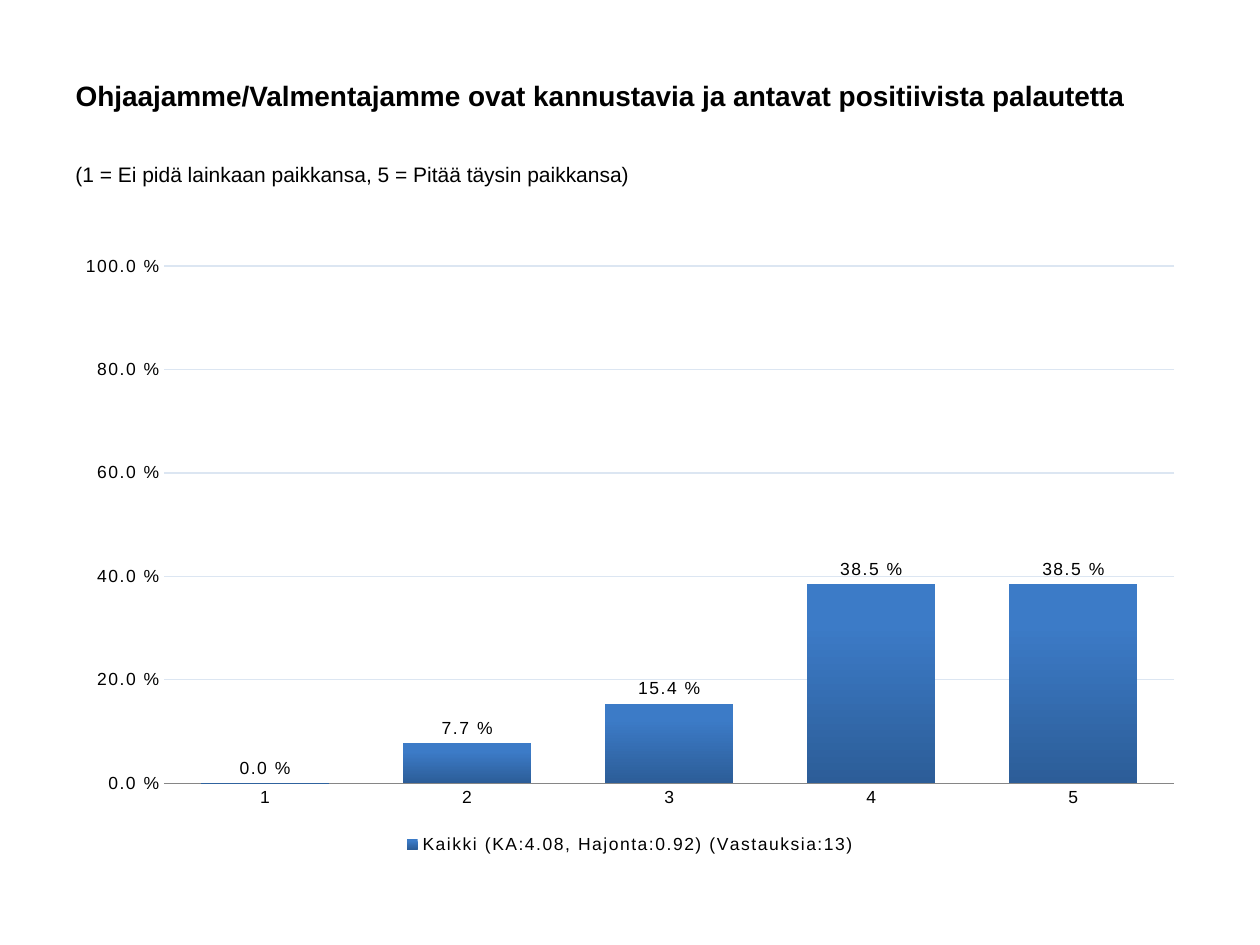
from lxml.etree import fromstring
from pptx import Presentation
from pptx.chart.data import CategoryChartData as ChartData
from pptx.dml.color import RGBColor
from pptx.enum.chart import (XL_CHART_TYPE as Kind, XL_LABEL_POSITION as Label,
                             XL_LEGEND_POSITION as Legend, XL_TICK_MARK as Tick)
from pptx.enum.text import MSO_ANCHOR as Anchor, PP_ALIGN as Align
from pptx.oxml.ns import qn
from pptx.util import Pt

TITLE = "Ohjaajamme/Valmentajamme ovat kannustavia ja antavat positiivista palautetta"
SCALE = "(1 = Ei pidä lainkaan paikkansa, 5 = Pitää täysin paikkansa)"
SERIES = "Kaikki (KA:4.08, Hajonta:0.92) (Vastauksia:13)"
SHARES = {"1": 0, "2": 0.077, "3": 0.154, "4": 0.385, "5": 0.385}
PERCENT = r"0.0\ %"

BOXES = {"title": (63, 45, 1134, 100),
         "scale": (63, 155, 1134, 74),
         "chart": (63, 244, 1134, 615)}
PLOT = (164, 266, 1010, 517)
EMU = 914400 // 126


def px(*sizes):
    return [n * 914400 // 126 for n in sizes]


def color(code):
    return RGBColor.from_string(code)


def style(font, size, bold=False):
    for key, val in {"name": "Arial", "size": Pt(size), "bold": bold}.items():
        setattr(font, key, val)
    font.color.rgb = color("000000")


def write(shape, text, size, bold, anchor):
    frame = shape.text_frame
    frame.text = text
    frame.word_wrap = True
    frame.vertical_anchor = anchor
    para = frame.paragraphs[0]
    para.alignment = Align.LEFT
    style(para.runs[0].font, size, bold)
    return para


def place_plot(chart):
    """Fix the inner plot area, given as fractions of the chart."""
    left, top, wide, high = BOXES["chart"]
    x, y, w, h = PLOT
    parts = {"x": (x - left) / wide, "y": (y - top) / high,
             "w": w / wide, "h": h / high}
    modes = '<c:layoutTarget val="inner"/><c:xMode val="edge"/><c:yMode val="edge"/>'
    sizes = "".join(f'<c:{key} val="{val:.3f}"/>' for key, val in parts.items())
    layout = fromstring(
        '<c:layout xmlns:c="http://schemas.openxmlformats.org/drawingml/2006/chart">'
        f"<c:manualLayout>{modes}{sizes}</c:manualLayout></c:layout>")
    area = chart._chartSpace.chart.plotArea
    for old in area.findall(qn("c:layout")):
        area.remove(old)
    area.insert(0, layout)


def add_bars(slide):
    data = ChartData(number_format=PERCENT)
    data.categories = list(SHARES)
    data.add_series(SERIES, list(SHARES.values()))
    chart = slide.shapes.add_chart(
        Kind.COLUMN_CLUSTERED, *px(*BOXES["chart"]), data).chart
    chart.has_title = False
    chart.has_legend = True
    chart.legend.position = Legend.BOTTOM
    chart.legend.include_in_layout = False
    style(chart.legend.font, 10)

    cats, vals = chart.category_axis, chart.value_axis
    for axis in (cats, vals):
        axis.major_tick_mark = axis.minor_tick_mark = Tick.NONE
        style(axis.tick_labels.font, 10)
    cats.format.line.color.rgb = color("868686")
    vals.format.line.fill.background()
    limits = {"minimum_scale": 0, "maximum_scale": 1, "major_unit": 0.2}
    for key, val in limits.items():
        setattr(vals, key, val)
    vals.tick_labels.number_format = PERCENT
    vals.tick_labels.number_format_is_linked = False
    grid = vals.major_gridlines.format.line
    grid.color.rgb = color("DCE6F2")
    grid.width = Pt(0.75)

    plot = chart.plots[0]
    plot.gap_width = 58
    plot.vary_by_categories = False
    plot.has_data_labels = True
    labels = plot.data_labels
    labels.show_value = True
    labels.number_format = PERCENT
    labels.number_format_is_linked = False
    labels.position = Label.OUTSIDE_END
    style(labels.font, 10)

    fill = plot.series[0].format.fill
    fill.gradient()
    fill.gradient_angle = 270
    stops = ((0.2, "3C7BC7"), (1, "2C5D98"))
    for stop, (spot, code) in zip(fill.gradient_stops, stops):
        stop.position = spot
        stop.color.rgb = color(code)

    for props in chart._chartSpace.iter(qn("a:defRPr")):
        props.set("spc", "100")
    place_plot(chart)


def main():
    deck = Presentation()
    deck.slide_width, deck.slide_height = px(1260, 945)
    slide = deck.slides.add_slide(deck.slide_layouts[5])
    title = slide.shapes.title
    title.left, title.top, title.width, title.height = px(*BOXES["title"])
    write(title, TITLE, 16, True, Anchor.MIDDLE)
    note = slide.shapes.add_textbox(*px(*BOXES["scale"]))
    write(note, SCALE, 12, False, Anchor.TOP).space_before = Pt(2.4)
    add_bars(slide)
    deck.save("out.pptx")


if __name__ == "__main__":
    main()
